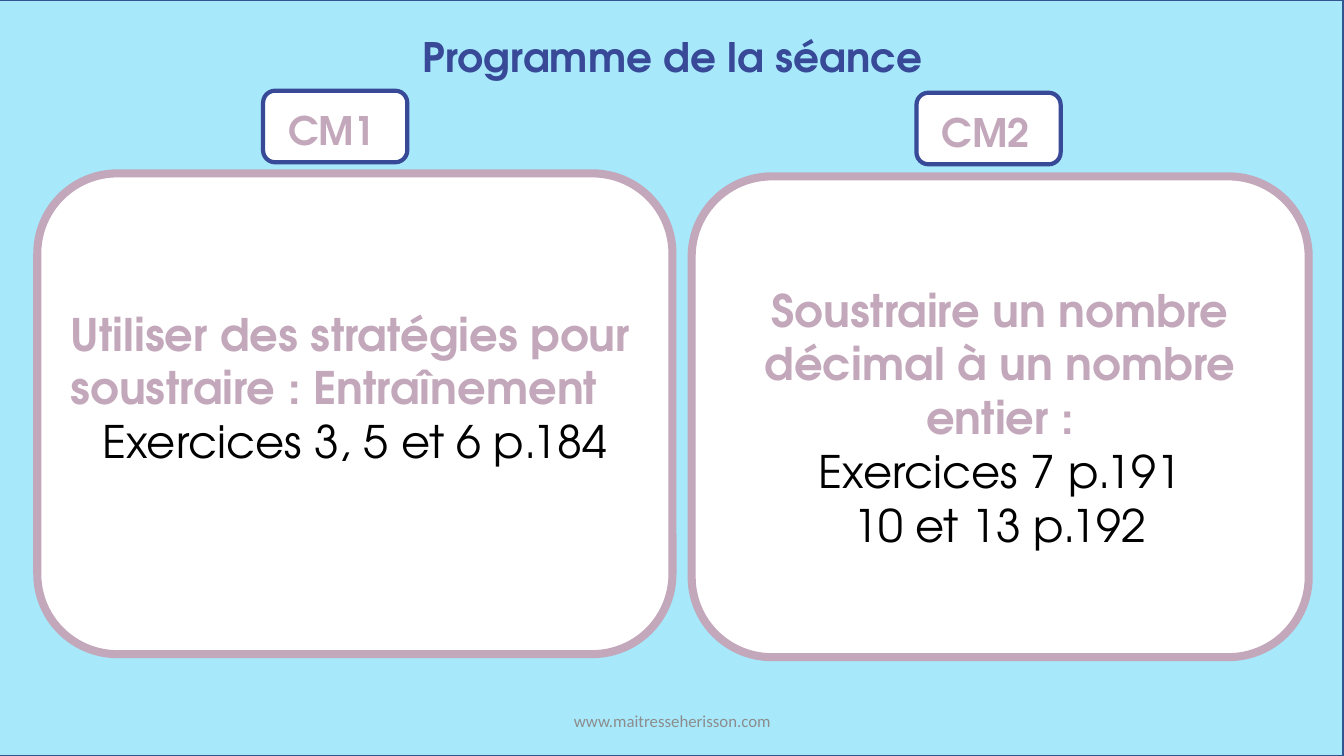
from pptx import Presentation
from pptx.dml.color import RGBColor
from pptx.enum import shapes, text
from pptx.util import Inches, Pt

FONT = "TeX Gyre Adventor"
SKY, WHITE, BLACK = "A7E8FB", "FFFFFF", "000000"
NAVY, MAUVE, GREY = "374997", "C3A7BA", "8C8C8C"
LEFT, CENTER = text.PP_ALIGN.LEFT, text.PP_ALIGN.CENTER
TOP, MIDDLE = text.MSO_ANCHOR.TOP, text.MSO_ANCHOR.MIDDLE


def rgb(color):
    return RGBColor.from_string(color)


def add_box(slide, kind, box, fill, line, width):
    sp = slide.shapes.add_shape(kind, *map(Inches, box))
    sp.shadow.inherit = False
    sp.fill.solid()
    sp.fill.fore_color.rgb = rgb(fill)
    sp.line.color.rgb = rgb(line)
    sp.line.width = Pt(width)
    return sp


def write(p, words, size, color, bold=False, font=FONT, align=CENTER):
    p.alignment = align
    r = p.add_run()
    r.text = words
    r.font.name = font
    r.font.size = Pt(size)
    r.font.bold = bold
    r.font.color.rgb = rgb(color)


def add_label(slide, box, words, size, color, anchor=TOP, **fmt):
    tf = slide.shapes.add_textbox(*map(Inches, box)).text_frame
    tf.word_wrap = True
    tf.vertical_anchor = anchor
    write(tf.paragraphs[0], words, size, color, **fmt)


def add_level_tag(slide, x, y, level):
    add_box(slide, shapes.MSO_SHAPE.ROUNDED_RECTANGLE, (x, y, 1.43, 0.71), WHITE, NAVY, 3)
    add_label(slide, (x + 0.15, y + 0.11, 1.1, 0.57), level, 28, MAUVE, bold=True, align=LEFT)


def add_task_card(slide, box, goal, exercises, goal_align=CENTER, bottom=0.05):
    """Rounded card: bold goal, then one line per set of exercises."""
    sp = add_box(slide, shapes.MSO_SHAPE.ROUNDED_RECTANGLE, box, WHITE, MAUVE, 5.75)
    tf = sp.text_frame
    tf.word_wrap = True
    tf.vertical_anchor = MIDDLE
    tf.margin_bottom = Inches(bottom)
    write(tf.paragraphs[0], goal, 32, MAUVE, bold=True, align=goal_align)
    for exercise in exercises:
        write(tf.add_paragraph(), exercise, 32, BLACK)


def build_programme(slide, width, height):
    add_box(slide, shapes.MSO_SHAPE.RECTANGLE, (-0.01, 0, width, height), SKY, "325491", 1)
    add_label(slide, (0.01, 0.27, width, 0.59), "Programme de la séance", 29, NAVY, bold=True)
    add_level_tag(slide, 2.61, 0.9, "CM1")
    add_task_card(slide, (0.37, 1.72, 6.3, 4.77),
                  "Utiliser des stratégies pour soustraire : Entraînement",
                  ["Exercices 3, 5 et 6 p.184"], goal_align=LEFT, bottom=0.58)
    add_level_tag(slide, 9.09, 0.92, "CM2")
    add_task_card(slide, (6.86, 1.75, 6.12, 4.77),
                  "Soustraire un nombre décimal à un nombre entier :",
                  ["Exercices 7 p.191", "10 et 13 p.192"])
    add_label(slide, (4.42, 6.95, 4.5, 0.4), "www.maitresseherisson.com", 12, GREY,
              anchor=MIDDLE, font="Calibri")


def main():
    prs = Presentation()
    width, height = 13.33, 7.5
    prs.slide_width, prs.slide_height = Inches(width), Inches(height)
    build_programme(prs.slides.add_slide(prs.slide_layouts[6]), width, height)
    prs.save("out.pptx")


if __name__ == "__main__":
    main()
